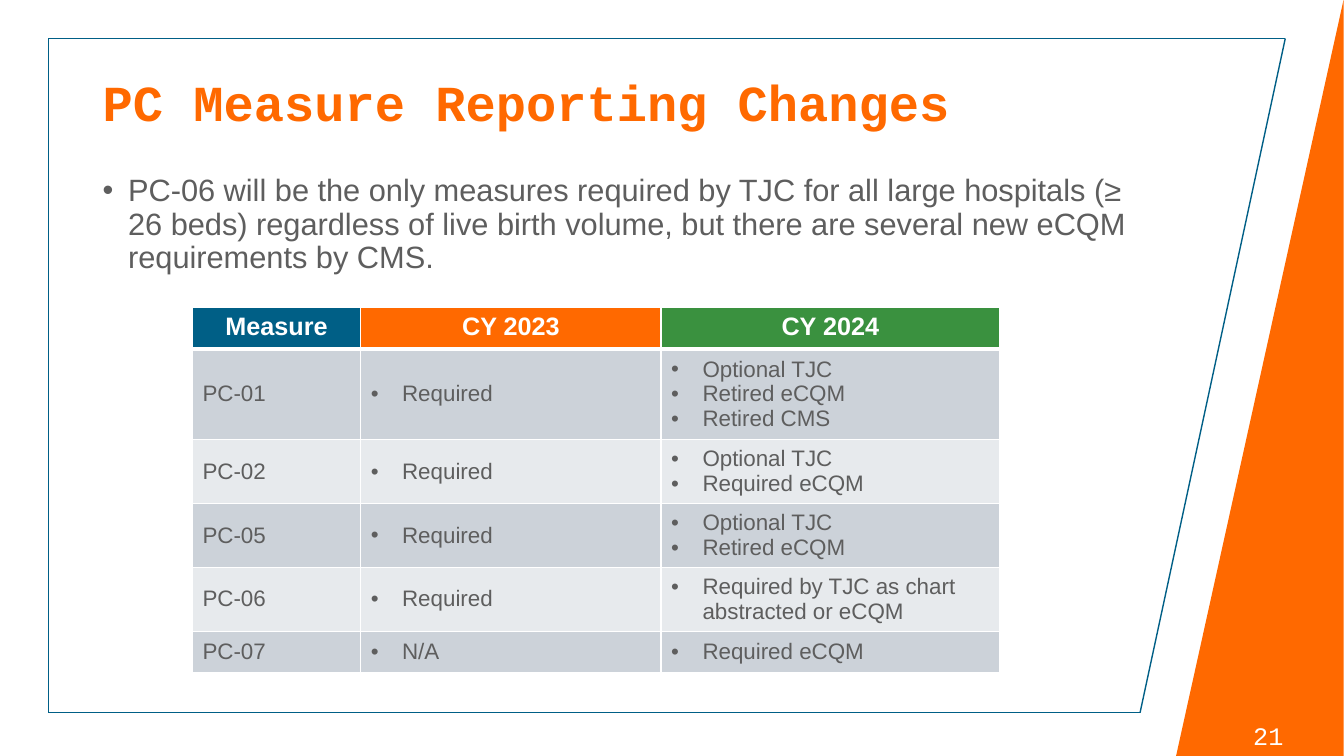
from dataclasses import dataclass

from lxml import etree
from pptx import Presentation
from pptx.dml.color import RGBColor
from pptx.enum.shapes import MSO_CONNECTOR, MSO_SHAPE
from pptx.enum.text import MSO_ANCHOR, PP_ALIGN
from pptx.oxml.ns import qn
from pptx.util import Cm, Pt

LEFT, CENTER = PP_ALIGN.LEFT, PP_ALIGN.CENTER
TOP, MIDDLE = MSO_ANCHOR.TOP, MSO_ANCHOR.MIDDLE
STRAIGHT = MSO_CONNECTOR.STRAIGHT
RIGHT_TRIANGLE = MSO_SHAPE.RIGHT_TRIANGLE

WHITE = RGBColor(0xFF, 0xFF, 0xFF)
ORANGE = RGBColor(0xFF, 0x69, 0x00)
BLUE = RGBColor(0x00, 0x5F, 0x86)
GREEN = RGBColor(0x3A, 0x91, 0x3F)
GRAY = RGBColor(0x5E, 0x5E, 0x5E)
BAND_DARK = RGBColor(0xCC, 0xD2, 0xD9)
BAND_LIGHT = RGBColor(0xE7, 0xEA, 0xED)

SANS, MONO = "Arial", "Courier New"


@dataclass
class Column:
    heading: str
    color: RGBColor
    width: float


@dataclass
class Measure:
    name: str
    before: str
    after: list[str]
    height: float


COLUMNS = [
    Column("Measure", BLUE, 4.24),
    Column("CY 2023", ORANGE, 7.57),
    Column("CY 2024", GREEN, 8.53),
]
HEADER_HEIGHT = 1.04
MEASURES = [
    Measure("PC-01", "Required", ["Optional TJC", "Retired eCQM", "Retired CMS"], 2.13),
    Measure("PC-02", "Required", ["Optional TJC", "Required eCQM"], 1.5),
    Measure("PC-05", "Required", ["Optional TJC", "Retired eCQM"], 1.5),
    Measure("PC-06", "Required", ["Required by TJC as chart abstracted or eCQM"], 1.5),
    Measure("PC-07", "N/A", ["Required eCQM"], 1.04),
]


def add_bullet(para, indent: float) -> None:
    properties = para._p.get_or_add_pPr()
    properties.set("marL", str(Cm(indent)))
    properties.set("indent", str(-Cm(indent)))
    etree.SubElement(properties, qn("a:buFont")).set("typeface", SANS)
    etree.SubElement(properties, qn("a:buChar")).set("char", "•")


def write_text(frame, lines: list[str], *, size: float, color: RGBColor,
               font: str = SANS, bold: bool = False, align=LEFT,
               indent: float = 0, spacing: float = 1.0) -> None:
    """Fill a text frame, one paragraph a line; an indent gives bullets."""
    frame.word_wrap = True
    for number, line in enumerate(lines):
        para = frame.add_paragraph() if number else frame.paragraphs[0]
        if indent:
            add_bullet(para, indent)
        para.alignment = align
        para.line_spacing = spacing
        span = para.add_run()
        span.text = line
        span.font.name = font
        span.font.size = Pt(size)
        span.font.bold = bold
        span.font.color.rgb = color


def add_text_box(page, place: tuple, text: str, *, anchor=TOP, **style) -> None:
    box = page.shapes.add_textbox(*map(Cm, place))
    box.text_frame.vertical_anchor = anchor
    write_text(box.text_frame, [text], **style)


def add_frame_line(page, start: tuple, end: tuple) -> None:
    line = page.shapes.add_connector(STRAIGHT, *map(Cm, start + end))
    line.line.color.rgb = BLUE
    line.line.width = Pt(1)
    etree.SubElement(line._element.spPr, qn("a:effectLst"))


def format_cell(cell, fill: RGBColor, bottom: float = 1) -> None:
    """Set white borders, then the fill that has to follow them."""
    properties = cell._tc.get_or_add_tcPr()
    for side, width in (("L", 1), ("R", 1), ("T", 1), ("B", bottom)):
        border = etree.SubElement(properties, qn(f"a:ln{side}"), w=str(Pt(width)))
        paint = etree.SubElement(border, qn("a:solidFill"))
        etree.SubElement(paint, qn("a:srgbClr"), val=str(WHITE))
    cell.fill.solid()
    cell.fill.fore_color.rgb = fill


def add_background(page) -> None:
    # Orange wedge on the right
    wedge = page.shapes.add_shape(RIGHT_TRIANGLE, Cm(29.64), 0, Cm(4.22), Cm(19.05))
    wedge._element.spPr.xfrm.set("flipH", "1")
    wedge.shadow.inherit = False
    wedge.fill.solid()
    wedge.fill.fore_color.rgb = ORANGE
    wedge.line.fill.background()

    # Slanted frame
    corners = [(1.22, 0.97), (32.39, 0.97), (28.73, 17.96), (1.22, 17.96)]
    for start, end in zip(corners, corners[1:] + corners[:1]):
        add_frame_line(page, start, end)


def add_measure_table(page) -> None:
    width = sum(column.width for column in COLUMNS)
    height = HEADER_HEIGHT + sum(measure.height for measure in MEASURES)
    table = page.shapes.add_table(len(MEASURES) + 1, len(COLUMNS), Cm(4.85), Cm(7.75),
                                  Cm(width), Cm(height)).table

    # Header row
    table.rows[0].height = Cm(HEADER_HEIGHT)
    for index, column in enumerate(COLUMNS):
        table.columns[index].width = Cm(column.width)
        cell = table.cell(0, index)
        format_cell(cell, column.color, bottom=3)
        write_text(cell.text_frame, [column.heading], size=18, color=WHITE,
                   bold=True, align=CENTER)

    # Banded measure rows
    for number, measure in enumerate(MEASURES, start=1):
        table.rows[number].height = Cm(measure.height)
        band = BAND_DARK if number % 2 else BAND_LIGHT
        for index, lines in enumerate(([measure.name], [measure.before], measure.after)):
            cell = table.cell(number, index)
            format_cell(cell, band)
            cell.vertical_anchor = MIDDLE
            write_text(cell.text_frame, lines, size=16, color=GRAY,
                       indent=0.79 if index else 0)


def main() -> None:
    deck = Presentation()
    deck.slide_width, deck.slide_height = Cm(33.87), Cm(19.05)
    page = deck.slides.add_slide(deck.slide_layouts[6])

    add_background(page)
    add_text_box(page, (31.04, 18.03, 1.85, 1.02), "21", size=18, color=WHITE,
                 font=MONO, align=CENTER)
    add_text_box(page, (2.34, 1.02, 29.21, 3.25), "PC Measure Reporting Changes",
                 anchor=MIDDLE, size=36, color=ORANGE, font=MONO, bold=True, spacing=0.9)
    add_measure_table(page)
    add_text_box(page, (2.34, 4.29, 26.52, 2.41),
                 "PC-06 will be the only measures required by TJC for all large hospitals "
                 "(≥ 26 beds) regardless of live birth volume, but there are several new "
                 "eCQM requirements by CMS.",
                 size=22, color=GRAY, indent=0.64, spacing=0.9)

    deck.save("out.pptx")


if __name__ == "__main__":
    main()
